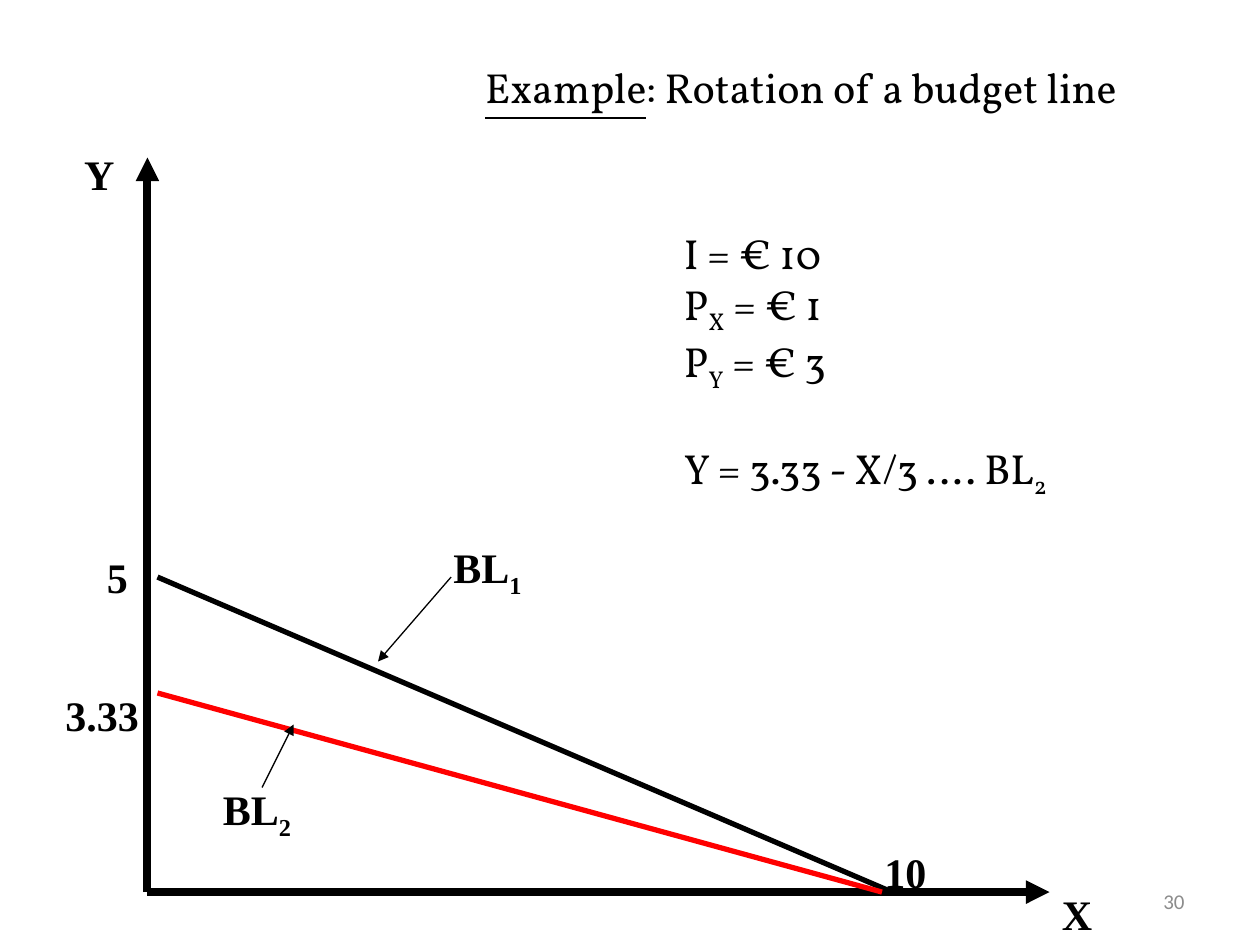
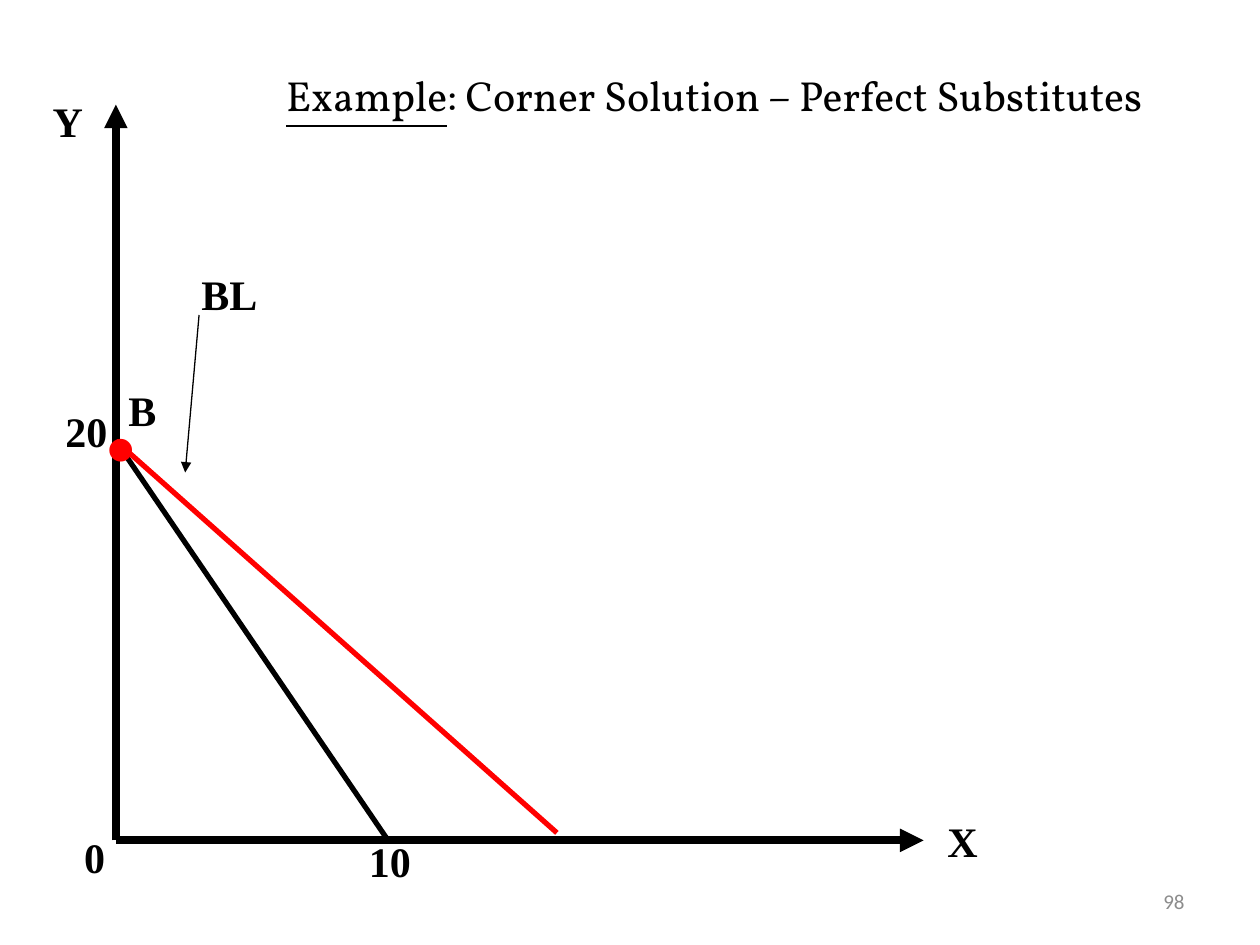
from pptx import Presentation
from pptx.dml.color import RGBColor
from pptx.enum.shapes import MSO_CONNECTOR as Connector
from pptx.enum.text import MSO_ANCHOR as Anchor, MSO_AUTO_SIZE as AutoSize, PP_ALIGN as Align
from pptx.oxml.ns import qn
from pptx.util import Emu, Pt
from lxml.etree import SubElement

# Shared style: 100 px to the inch
PX = 9144
BLACK, RED, GREY = "000000", "FF0000", "8C8C8C"
LABEL_FONT, TEXT_FONT, NUMBER_FONT = "Times New Roman", "Vollkorn", "Calibri"
LABEL_HEIGHT = 50
AXIS, BUDGET, POINTER = 4.5, 3, 0.75
NUMBER_BOX = (717, 695, 233, 40)
TITLE_LEAD = "Example"

# Content: "_" makes the next character a subscript.
# Labels are (text, left, top, width); lines are (start, end, colour).
SLIDES = [
    {
        "title": ": Rotation of a budget line",
        "title_box": (375, 44, 531, 50),
        "number": "30",
        "origin": (117, 708),
        "axis_ends": (833, 125),
        "budget_lines": [
            ((125, 458), (708, 708), BLACK),
            ((700, 708), (125, 550), RED),
        ],
        "pointers": [((358, 458), (300, 525)), ((208, 625), (233, 575))],
        "labels": [
            ("Y", 57, 113, 44), ("X", 833, 700, 44),
            ("5", 75, 433, 45), ("3.33", 42, 542, 78), ("10", 692, 667, 53),
            ("BL_1", 350, 425, 76), ("BL_2", 167, 617, 76),
        ],
        "equations": ["I = € 10", "P_X = € 1", "P_Y = € 3", "Y = 3.33 - X/3 …. BL_2"],
        "equations_box": (533, 176, 334, 210),
    },
    {
        "title": ": Corner Solution – Perfect Substitutes",
        "title_box": (217, 50, 713, 50),
        "number": "98",
        "origin": (92, 667),
        "axis_ends": (733, 83),
        "budget_lines": [
            ((92, 350), (308, 667), BLACK),
            ((92, 350), (442, 661), RED),
        ],
        "pointers": [((158, 250), (147, 375))],
        "labels": [
            ("Y", 32, 71, 44), ("X", 742, 642, 44), ("0", 57, 655, 37),
            ("10", 283, 658, 53), ("20", 42, 317, 53),
            ("BL", 150, 208, 65), ("B", 92, 300, 42),
        ],
        "corner_point": (75, 308, 43, 90),
    },
]


def px(*lengths):
    return [Emu(length * PX) for length in lengths]


def colour_of(hex_string):
    return RGBColor.from_string(hex_string)


def add_run(paragraph, text, *, font=LABEL_FONT, size=24, colour=BLACK,
            bold=False, underline=False, subscript=False):
    if not text:
        return
    run = paragraph.add_run()
    run.text = text
    run.font.name, run.font.size = font, Pt(size)
    run.font.bold, run.font.underline = bold, underline
    run.font.color.rgb = colour_of(colour)
    if subscript:
        run.font._element.set("baseline", "-25000")


def write(paragraph, text, **style):
    """Fill a paragraph, lowering each character that follows "_"."""
    plain, *rest = text.split("_")
    add_run(paragraph, plain, **style)
    for part in rest:
        add_run(paragraph, part[0], subscript=True, **style)
        add_run(paragraph, part[1:], **style)


def add_text(slide, lines, box, *, align=Align.LEFT, anchor=Anchor.TOP,
             wrap=False, last_gap=0, **style):
    frame = slide.shapes.add_textbox(*px(*box)).text_frame
    frame.word_wrap, frame.vertical_anchor = wrap, anchor
    frame.auto_size = AutoSize.NONE if wrap else AutoSize.SHAPE_TO_FIT_TEXT
    for index, line in enumerate(lines):
        paragraph = frame.add_paragraph() if index else frame.paragraphs[0]
        paragraph.alignment = align
        write(paragraph, line, **style)
    if last_gap:
        paragraph.space_before = Pt(last_gap)


def add_line(slide, start, end, width, colour=BLACK, arrow=False):
    line = slide.shapes.add_connector(Connector.STRAIGHT, *px(*start, *end))
    line.line.width = Pt(width)
    line.line.color.rgb = colour_of(colour)
    properties = line._element.spPr
    if arrow:
        SubElement(properties.find(qn("a:ln")), qn("a:tailEnd"), type="triangle")
    SubElement(properties, qn("a:effectLst"))


def set_title(slide, text, box):
    title = slide.shapes.title
    title.left, title.top, title.width, title.height = px(*box)
    frame = title.text_frame
    frame.vertical_anchor, frame.auto_size = Anchor.TOP, AutoSize.NONE
    frame.word_wrap = False
    paragraph = frame.paragraphs[0]
    paragraph.alignment = Align.LEFT
    add_run(paragraph, TITLE_LEAD, font=TEXT_FONT, underline=True)
    add_run(paragraph, text, font=TEXT_FONT)


def build_slide(presentation, content):
    slide = presentation.slides.add_slide(presentation.slide_layouts[5])
    set_title(slide, content["title"], content["title_box"])
    add_text(slide, [content["number"]], NUMBER_BOX, align=Align.RIGHT,
             anchor=Anchor.MIDDLE, wrap=True, font=NUMBER_FONT, size=12, colour=GREY)

    # Axes, budget lines and pointers
    origin = content["origin"]
    x_end, y_end = content["axis_ends"]
    for end in [(x_end, origin[1]), (origin[0], y_end)]:
        add_line(slide, origin, end, AXIS, arrow=True)
    for start, end, colour in content["budget_lines"]:
        add_line(slide, start, end, BUDGET, colour)
    for start, end in content["pointers"]:
        add_line(slide, start, end, POINTER, arrow=True)

    # Corner point, labels and equations
    if "corner_point" in content:
        add_text(slide, ["•"], content["corner_point"], size=48, colour=RED, bold=True)
    for text, left, top, width in content["labels"]:
        add_text(slide, [text], (left, top, width, LABEL_HEIGHT), bold=True)
    if "equations" in content:
        add_text(slide, content["equations"], content["equations_box"],
                 font=TEXT_FONT, last_gap=28)


def main():
    presentation = Presentation()
    presentation.slide_width, presentation.slide_height = px(1000, 750)
    for content in SLIDES:
        build_slide(presentation, content)
    presentation.save("out.pptx")


if __name__ == "__main__":
    main()
